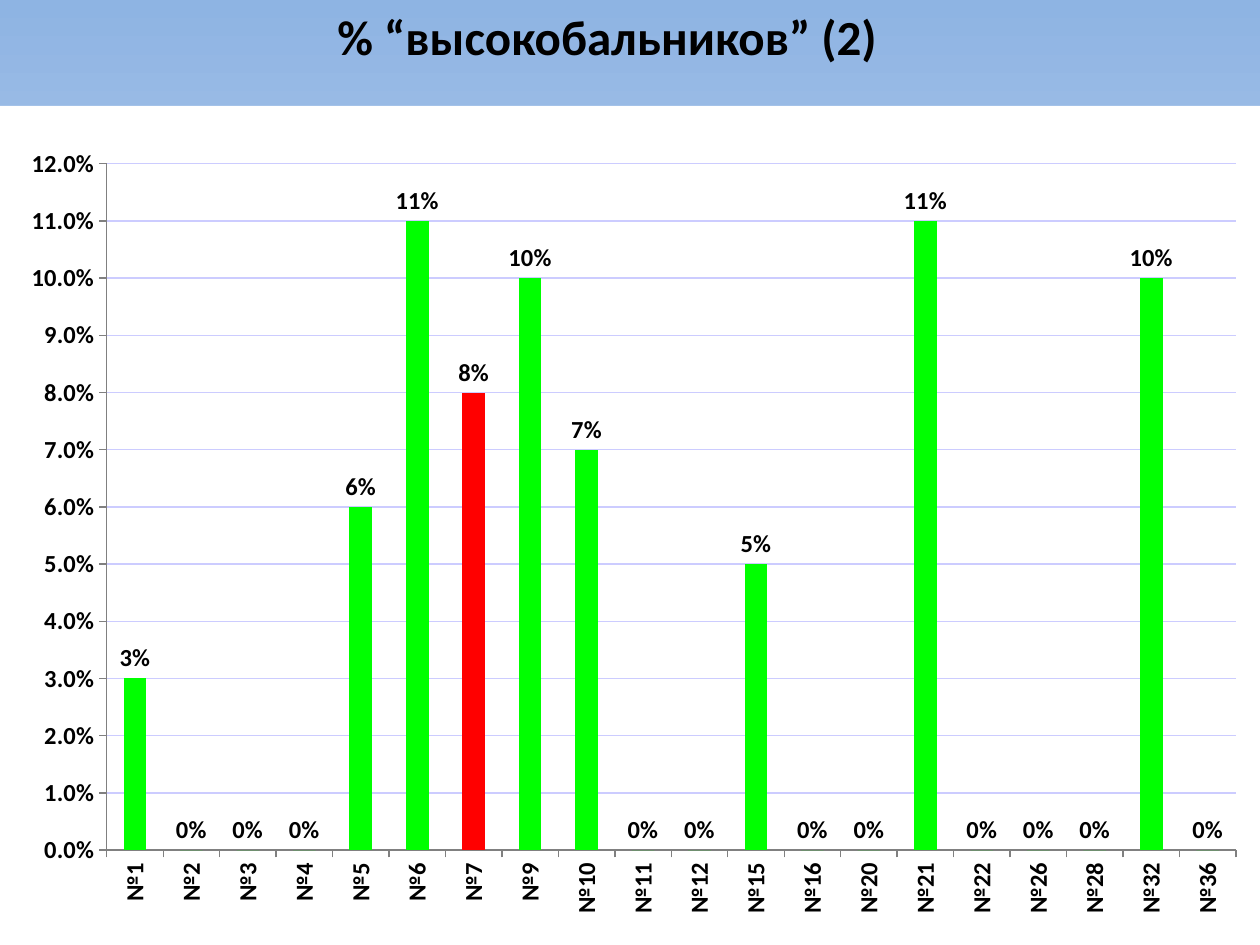
import copy
import pptx
import pptx.chart.data
import pptx.dml.color
import pptx.enum.chart
import pptx.enum.text
import pptx.oxml
import pptx.oxml.ns
import pptx.util

Pt = pptx.util.Pt
RGB = pptx.dml.color.RGBColor.from_string
NS = pptx.oxml.ns.nsdecls("c", "a")

COLORS = {
    "text": "000000", "bar": "00FF00", "mark": "FF0000", "axis": "808080",
    "grid": "CCCCFF", "area": "FFFFFF",
    "top": "8EB4E3", "middle": "C2D1ED", "bottom": "E1E8F5",
}
SCORES = {
    "№1": 0.03, "№2": 0, "№3": 0, "№4": 0, "№5": 0.06, "№6": 0.11, "№7": 0.08,
    "№9": 0.1, "№10": 0.07, "№11": 0, "№12": 0, "№15": 0.05, "№16": 0,
    "№20": 0, "№21": 0.11, "№22": 0, "№26": 0, "№28": 0, "№32": 0.1, "№36": 0,
}


def style(font, size, bold=True):
    values = {"name": "Calibri", "size": Pt(size), "bold": bold}
    for key, value in values.items():
        setattr(font, key, value)
    font.color.rgb = RGB(COLORS["text"])


deck = pptx.Presentation()
deck.slide_width, deck.slide_height = Pt(720), Pt(540)
slide = deck.slides.add_slide(deck.slide_layouts[5])

# Background gradient, dark at the top
fill = slide.background.fill
fill.gradient()
fill.gradient_angle = 270
stops = fill._fill._gradFill.gsLst
stops.insert(1, copy.deepcopy(stops[0]))
for stop, name, place in zip(fill.gradient_stops, ("top", "middle", "bottom"), (0, 0.5, 1)):
    stop.color.rgb = RGB(COLORS[name])
    stop.position = place

# Title
title = slide.shapes.title
box = {"left": Pt(0), "top": Pt(0), "width": Pt(700), "height": Pt(80)}
for key, value in box.items():
    setattr(title, key, value)
frame = title.text_frame
frame.text = "% “высокобальников” (2) "
frame.word_wrap = True
frame.auto_size = pptx.enum.text.MSO_AUTO_SIZE.NONE
frame.vertical_anchor = pptx.enum.text.MSO_ANCHOR.TOP
line = frame.paragraphs[0]
line.alignment = pptx.enum.text.PP_ALIGN.CENTER
style(line.runs[0].font, 28)

# Chart
data = pptx.chart.data.CategoryChartData(number_format="0%")
data.categories = list(SCORES)
data.add_series("Series 1", list(SCORES.values()))
chart = slide.shapes.add_chart(
    pptx.enum.chart.XL_CHART_TYPE.COLUMN_CLUSTERED,
    Pt(0), Pt(60.5), Pt(720), Pt(479.5), data).chart
chart.has_legend = False
chart.has_title = False
style(chart.font, 10, False)

# Chart area fill and plot position
root = chart._chartSpace
root.find(pptx.oxml.ns.qn("c:chart")).addnext(pptx.oxml.parse_xml(
    f'<c:spPr {NS}><a:solidFill><a:srgbClr val="{COLORS["area"]}"/></a:solidFill>'
    '<a:ln><a:noFill/></a:ln></c:spPr>'))
area = root.find(".//" + pptx.oxml.ns.qn("c:plotArea"))
for old in area.findall(pptx.oxml.ns.qn("c:layout")):
    area.remove(old)
parts = {"layoutTarget": "outer", "xMode": "edge", "yMode": "edge",
         "x": 0.025, "y": 0.051, "w": 0.956, "h": 0.912}
inner = "".join(f'<c:{key} val="{value}"/>' for key, value in parts.items())
area.insert(0, pptx.oxml.parse_xml(
    f"<c:layout {NS}><c:manualLayout>{inner}</c:manualLayout></c:layout>"))

# Axes
for axis in (chart.category_axis, chart.value_axis):
    axis.major_tick_mark = pptx.enum.chart.XL_TICK_MARK.OUTSIDE
    axis.minor_tick_mark = pptx.enum.chart.XL_TICK_MARK.NONE
    axis.format.line.color.rgb = RGB(COLORS["axis"])
    axis.format.line.width = Pt(0)
    style(axis.tick_labels.font, 14)
names = chart.category_axis._element.find(".//" + pptx.oxml.ns.qn("a:bodyPr"))
names.set("rot", "-5400000")
names.set("vert", "horz")

scale = chart.value_axis
limits = {"minimum_scale": 0, "maximum_scale": 0.12, "major_unit": 0.01,
          "has_major_gridlines": True}
for key, value in limits.items():
    setattr(scale, key, value)
grid = scale.major_gridlines.format.line
grid.color.rgb = RGB(COLORS["grid"])
grid.width = Pt(0)
scale.tick_labels.number_format = "0.0%"
scale.tick_labels.number_format_is_linked = False

# Bars and labels
plot = chart.plots[0]
plot.gap_width = 150
plot.vary_by_categories = False
bars = plot.series[0]
bars.format.fill.solid()
bars.format.fill.fore_color.rgb = RGB(COLORS["bar"])
mark = bars.points[list(SCORES).index("№7")].format.fill
mark.solid()
mark.fore_color.rgb = RGB(COLORS["mark"])
labels = bars.data_labels
form = {"show_value": True, "number_format": "0%", "number_format_is_linked": False,
        "position": pptx.enum.chart.XL_LABEL_POSITION.OUTSIDE_END}
for key, value in form.items():
    setattr(labels, key, value)
style(labels.font, 14)

deck.save("out.pptx")
